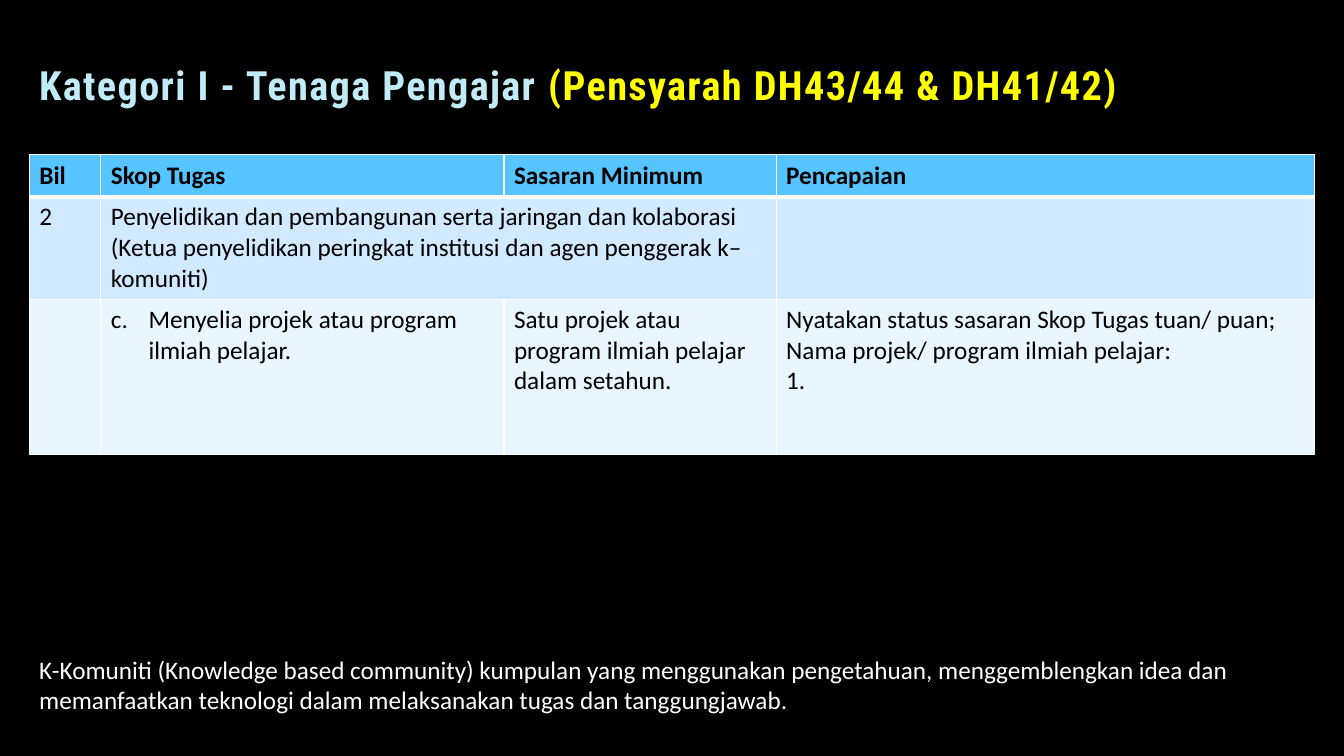
from dataclasses import dataclass
from lxml.etree import SubElement
from pptx import Presentation
from pptx.dml.color import RGBColor
from pptx.enum.text import MSO_ANCHOR
from pptx.oxml import parse_xml
from pptx.oxml.ns import nsdecls, qn
from pptx.util import Cm, Pt


@dataclass(frozen=True)
class Theme:
    background: str = "000000"
    title: str = "C1EBF7"
    highlight: str = "FFFF00"
    outline: str = "404040"
    light: str = "FFFFFF"
    dark: str = "000000"
    rows: tuple = ("56C5FF", "D1EAFF", "E9F5FF")
    title_font: str = "Roboto Condensed"
    body_font: str = "Calibri"
    title_size: float = 28.8
    body_size: float = 18


THEME = Theme()
TITLE_FORMAT = {"name": THEME.title_font, "size": Pt(THEME.title_size), "bold": True}
BODY_FORMAT = {"name": THEME.body_font, "size": Pt(THEME.body_size), "bold": False}
HEADER_FORMAT = {**BODY_FORMAT, "bold": True}

COLUMNS = (1.8, 10.16, 6.86, 13.56)
ROW_HEIGHTS = (1.07, 2.57, 3.91)
ROWS = (
    ("Bil", "Skop Tugas", "Sasaran Minimum", "Pencapaian"),
    ("2",
     "Penyelidikan dan pembangunan serta jaringan dan kolaborasi "
     "(Ketua penyelidikan peringkat institusi dan agen penggerak k– komuniti)",
     "", ""),
    ("",
     "Menyelia projek atau program ilmiah pelajar.",
     "Satu projek atau program ilmiah pelajar dalam setahun.",
     "Nyatakan status sasaran Skop Tugas tuan/ puan;\n"
     "Nama projek/ program ilmiah pelajar:\n1."),
)
FOOTNOTE = (
    "K-Komuniti (Knowledge based community) kumpulan yang menggunakan pengetahuan, "
    "menggemblengkan idea dan memanfaatkan teknologi dalam melaksanakan tugas dan "
    "tanggungjawab."
)


def add_run(p, text, color, formats):
    r = p.add_run()
    r.text = text
    for name, value in formats.items():
        setattr(r.font, name, value)
    r.font.color.rgb = RGBColor.from_string(color)
    return r


def add_text_box(s, left, top, width, height, anchor=MSO_ANCHOR.TOP):
    tf = s.shapes.add_textbox(Cm(left), Cm(top), Cm(width), Cm(height)).text_frame
    tf.word_wrap = True
    tf.vertical_anchor = anchor
    return tf.paragraphs[0]


def style_title_run(r):
    rPr = r.font._element
    rPr.set("spc", "100")
    rPr.insert(0, parse_xml(
        f'<a:ln {nsdecls("a")} w="9525"><a:solidFill><a:srgbClr val="{THEME.outline}">'
        '<a:alpha val="10000"/></a:srgbClr></a:solidFill><a:prstDash val="solid"/></a:ln>'))


def add_title(s):
    p = add_text_box(s, 0.74, 1.19, 28.88, 1.7, MSO_ANCHOR.BOTTOM)
    p.line_spacing = 0.9
    for text, color in (
        ("Kategori I - Tenaga Pengajar ", THEME.title),
        ("(Pensyarah DH43/44 & DH41/42)", THEME.highlight),
    ):
        style_title_run(add_run(p, text, color, TITLE_FORMAT))


def set_borders(cell, widths):
    tcPr = cell._tc.get_or_add_tcPr()
    for side, width in widths.items():
        ln = SubElement(tcPr, qn(f"a:ln{side}"), w=str(Pt(width)))
        fill = SubElement(ln, qn("a:solidFill"))
        SubElement(fill, qn("a:srgbClr"), val=THEME.light)


def set_letter_list(p, start):
    pPr = p._p.get_or_add_pPr()
    for name, value in {"marL": Cm(0.95), "indent": -Cm(0.95)}.items():
        pPr.set(name, str(value))
    SubElement(pPr, qn("a:buFont"), typeface="+mj-lt")
    SubElement(pPr, qn("a:buAutoNum"), type="alphaLcPeriod", startAt=str(start))


def fill_cell(cell, text, row):
    set_borders(cell, {"L": 1, "R": 1, "T": 3 if row == 1 else 1, "B": 3 if row == 0 else 1})
    cell.fill.solid()
    cell.fill.fore_color.rgb = RGBColor.from_string(THEME.rows[row])
    cell.vertical_anchor = MSO_ANCHOR.TOP if row else MSO_ANCHOR.MIDDLE
    if not text:
        return
    tf = cell.text_frame
    for i, line in enumerate(text.split("\n")):
        p = tf.add_paragraph() if i else tf.paragraphs[0]
        add_run(p, line, THEME.dark, BODY_FORMAT if row else HEADER_FORMAT)


def add_task_table(s):
    table = s.shapes.add_table(
        len(ROWS), len(COLUMNS), Cm(0.74), Cm(3.89), Cm(sum(COLUMNS)), Cm(sum(ROW_HEIGHTS))
    ).table
    for column, width in zip(table.columns, COLUMNS):
        column.width = Cm(width)
    for i, (texts, height) in enumerate(zip(ROWS, ROW_HEIGHTS)):
        table.rows[i].height = Cm(height)
        for j, text in enumerate(texts):
            fill_cell(table.cell(i, j), text, i)
    table.cell(1, 1).merge(table.cell(1, 2))
    set_letter_list(table.cell(2, 1).text_frame.paragraphs[0], 3)


def add_footnote(s):
    p = add_text_box(s, 0.74, 16.36, 31.55, 1.8)
    add_run(p, FOOTNOTE, THEME.light, BODY_FORMAT)


def main():
    prs = Presentation()
    prs.slide_width, prs.slide_height = Cm(33.87), Cm(19.05)
    s = prs.slides.add_slide(prs.slide_layouts[6])
    s.background.fill.solid()
    s.background.fill.fore_color.rgb = RGBColor.from_string(THEME.background)
    add_task_table(s)
    add_title(s)
    add_footnote(s)
    prs.save("out.pptx")


if __name__ == "__main__":
    main()
